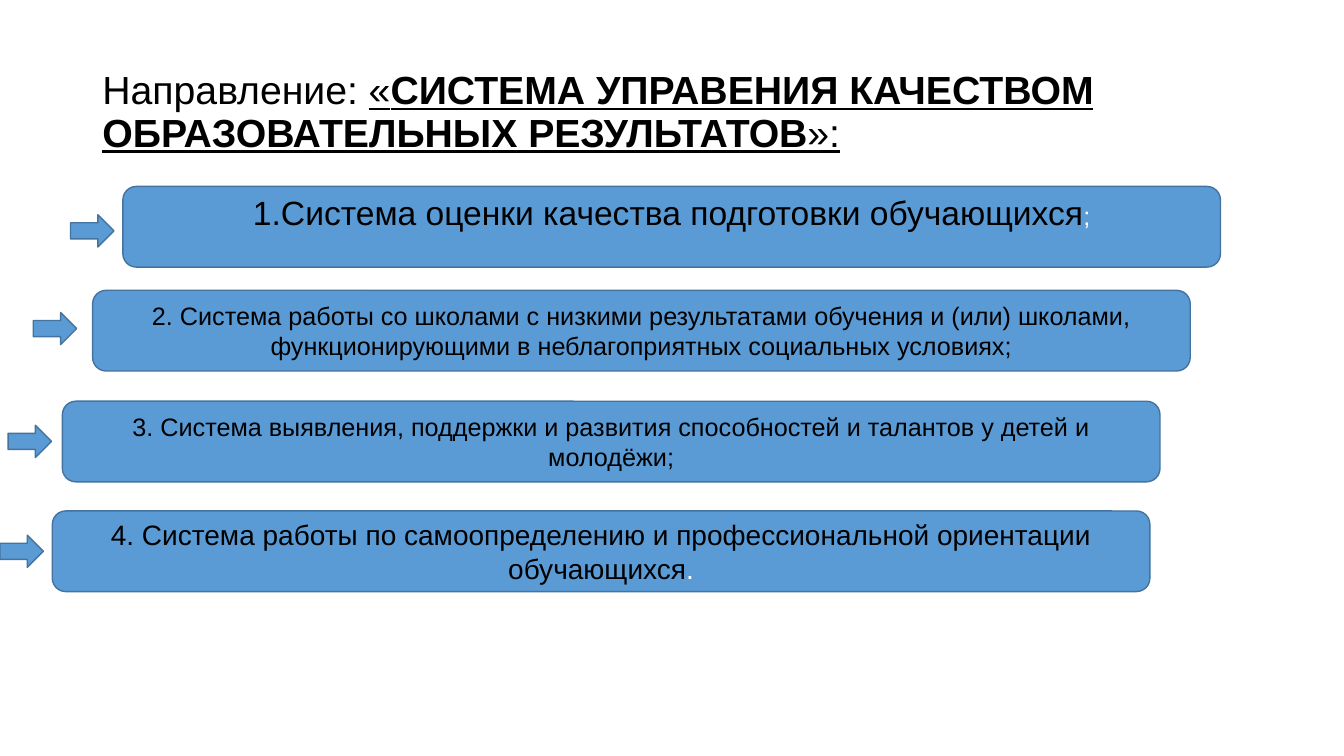
from pptx import Presentation
from pptx.dml.color import RGBColor
from pptx.enum.shapes import MSO_SHAPE as SHAPE
from pptx.enum.text import MSO_ANCHOR as ANCHOR, MSO_AUTO_SIZE as AUTOSIZE, PP_ALIGN as ALIGN
from pptx.util import Pt

COLORS = {"fill": "5B9BD5", "line": "43739E", "text": "000000", "light": "FFFFFF"}
FONT = "Arial"
BAR_W, BAR_H = 784, 57.6
ARROW_W, ARROW_H = 31, 23

# Bar left and top, arrow left and top, text, pale closing mark and its size, text size, bottom inset
DIRECTIONS = [
    (87.8, 133.2, 50.4, 153.4, "1.Система оценки качества подготовки обучающихся", ";", 18, 24, 24.4),
    (66.2, 207.4, 23.8, 223.2, "2. Система работы со школами с низкими результатами обучения и (или) школами, "
     "функционирующими в неблагоприятных социальных условиях;", "", 18, 18, 3.6),
    (44.6, 286.6, 5.8, 303.8, "3. Система выявления, поддержки и развития способностей и талантов "
     "у детей и молодёжи;", "", 18, 18, 3.6),
    (37.4, 365, 0, 382.3, "4. Система работы по самоопределению и профессиональной ориентации "
     "обучающихся", ".", 20, 20, 3.6),
]


def rgb(name):
    return RGBColor.from_string(COLORS[name])


def add_title(slide, x, y, w, h):
    sp = slide.shapes.title
    sp.left, sp.top, sp.width, sp.height = Pt(x), Pt(y), Pt(w), Pt(h)
    tf = sp.text_frame
    tf.auto_size = AUTOSIZE.NONE
    tf.word_wrap = True
    tf.vertical_anchor = ANCHOR.MIDDLE
    p = tf.paragraphs[0]
    p.alignment, p.line_spacing = ALIGN.LEFT, 0.9
    p.font.name, p.font.size, p.font.color.rgb = FONT, Pt(28), rgb("text")
    for text, underline, bold in [
        ("Направление: ", False, False),
        ("«", True, False),
        ("СИСТЕМА УПРАВЕНИЯ КАЧЕСТВОМ ОБРАЗОВАТЕЛЬНЫХ РЕЗУЛЬТАТОВ", True, True),
        ("»:", True, False),
    ]:
        r = p.add_run()
        r.text = text
        r.font.underline, r.font.bold = underline, bold


def add_blue_shape(slide, kind, x, y, w, h):
    sp = slide.shapes.add_shape(kind, Pt(x), Pt(y), Pt(w), Pt(h))
    sp.shadow.inherit = False
    sp.fill.solid()
    sp.fill.fore_color.rgb = rgb("fill")
    sp.line.color.rgb = rgb("line")
    sp.line.width = Pt(1)
    return sp


def add_bar(slide, x, y, text, mark, mark_size, size, bottom_inset):
    sp = add_blue_shape(slide, SHAPE.ROUNDED_RECTANGLE, x, y, BAR_W, BAR_H)
    tf = sp.text_frame
    tf.word_wrap = True
    tf.vertical_anchor = ANCHOR.MIDDLE
    tf.margin_bottom = Pt(bottom_inset)
    p = tf.paragraphs[0]
    p.alignment = ALIGN.CENTER
    p.font.name, p.font.size, p.font.color.rgb = FONT, Pt(size), rgb("text")
    p.add_run().text = text
    if mark:
        r = p.add_run()
        r.text = mark
        r.font.size, r.font.color.rgb = Pt(mark_size), rgb("light")


def build_slide(prs):
    slide = prs.slides.add_slide(prs.slide_layouts[5])
    # Heading
    add_title(slide, 66, 28.8, 828, 104.4)
    # Bars with their arrows
    for x, y, arrow_x, arrow_y, *content in DIRECTIONS:
        add_bar(slide, x, y, *content)
        add_blue_shape(slide, SHAPE.RIGHT_ARROW, arrow_x, arrow_y, ARROW_W, ARROW_H)


def main():
    prs = Presentation()
    prs.slide_width, prs.slide_height = Pt(960), Pt(540)
    build_slide(prs)
    prs.save("out.pptx")


if __name__ == "__main__":
    main()
